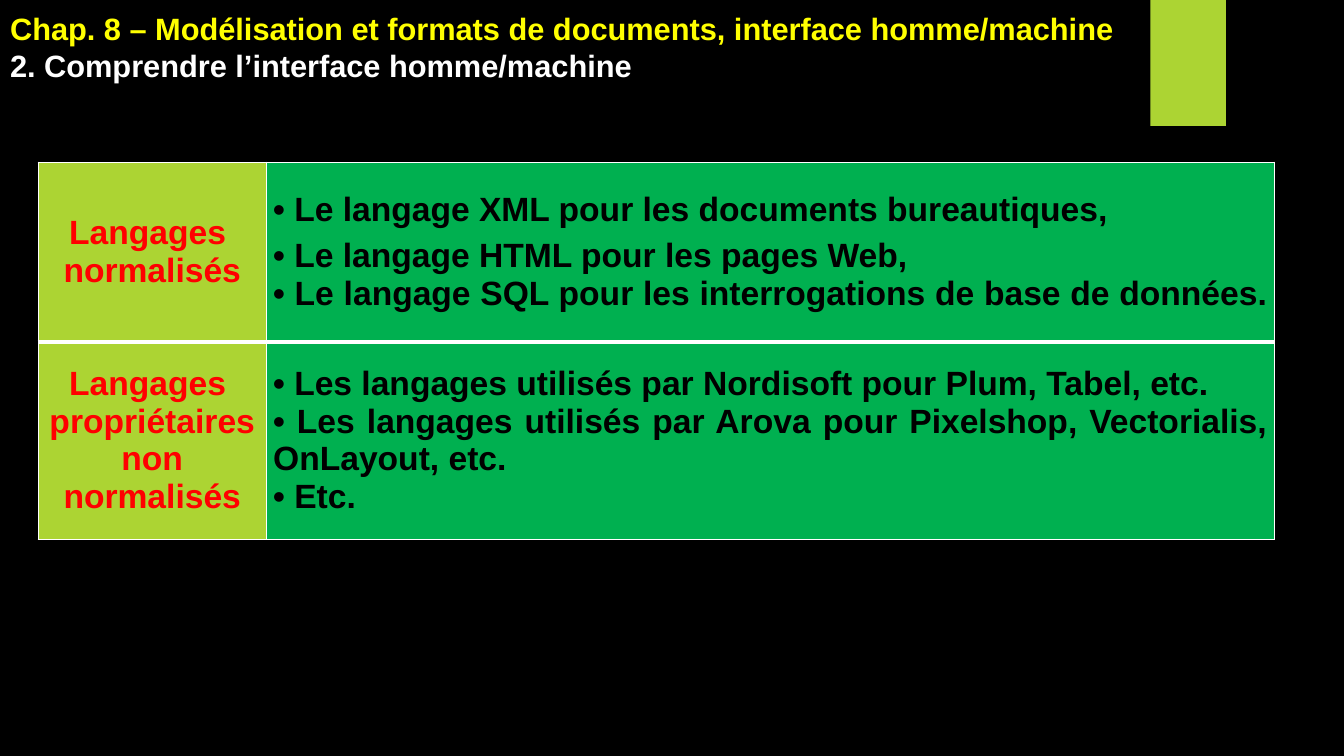
from dataclasses import dataclass

from lxml.etree import SubElement
from pptx import Presentation
from pptx.dml.color import RGBColor as Rgb
from pptx.enum.shapes import MSO_SHAPE as Shape
from pptx.enum.text import MSO_ANCHOR as Anchor, MSO_AUTO_SIZE as Auto, PP_ALIGN as Align
from pptx.oxml.ns import qn
from pptx.util import Inches, Pt


@dataclass(frozen=True)
class Theme:
    font: str = "Arial"
    back: str = "000000"
    lime: str = "ACD433"
    green: str = "00B050"
    red: str = "FF0000"
    yellow: str = "FFFF00"
    white: str = "FFFFFF"
    black: str = "000000"
    head: int = 22
    body: int = 24


@dataclass(frozen=True)
class Line:
    text: str
    color: str
    before: int = 0


@dataclass(frozen=True)
class Row:
    height: float
    label: list[Line]
    items: list[Line]


THEME = Theme()
TITLE = [
    Line("Chap. 8 – Modélisation et formats de documents, interface homme/machine", THEME.yellow),
    Line("2. Comprendre l’interface homme/machine", THEME.white),
]
COLS = (2.26, 10)
ROWS = [
    Row(
        1.78,
        [Line("Langages ", THEME.red), Line("normalisés", THEME.red)],
        [
            Line("• Le langage XML pour les documents bureautiques,", THEME.black),
            Line("• Le langage HTML pour les pages Web,", THEME.black, before=6),
            Line("• Le langage SQL pour les interrogations de base de données. ", THEME.black),
        ],
    ),
    Row(
        1.96,
        [Line(text, THEME.red) for text in ("Langages ", "propriétaires", "non", "normalisés")],
        [
            Line("• Les langages utilisés par Nordisoft pour Plum, Tabel, etc.", THEME.black),
            Line("• Les langages utilisés par Arova pour Pixelshop, Vectorialis, OnLayout, etc.",
                 THEME.black),
            Line("• Etc.", THEME.black),
        ],
    ),
]


def write(frame, lines: list[Line], *, size: int, align: Align) -> None:
    for i, line in enumerate(lines):
        para = frame.paragraphs[0] if i == 0 else frame.add_paragraph()
        para.alignment = align
        para.space_before = Pt(line.before)
        run = para.add_run()
        run.text = line.text
        font = run.font
        font.name, font.size, font.bold = THEME.font, Pt(size), True
        font.color.rgb = Rgb.from_string(line.color)


def paint(target, color: str) -> None:
    target.fill.solid()
    target.fill.fore_color.rgb = Rgb.from_string(color)


def edge(cell, side: str, width: float) -> None:
    props = cell._tc.get_or_add_tcPr()
    line = SubElement(props, qn(f"a:ln{side}"), w=str(Pt(width)))
    fill = SubElement(line, qn("a:solidFill"))
    SubElement(fill, qn("a:srgbClr"), val=THEME.white)


def add_title(slide) -> None:
    title = slide.shapes.title
    title.left, title.top = Inches(0), Inches(-0.05)
    title.width, title.height = Inches(11.26), Inches(0.93)
    frame = title.text_frame
    frame.word_wrap, frame.auto_size = True, Auto.NONE
    frame.vertical_anchor = Anchor.BOTTOM
    write(frame, TITLE, size=THEME.head, align=Align.LEFT)


def add_tab(slide) -> None:
    tab = slide.shapes.add_shape(
        Shape.RECTANGLE, Inches(11.41), Inches(0), Inches(0.75), Inches(1.25))
    tab.shadow.inherit = False
    paint(tab, THEME.lime)
    tab.line.fill.background()


def add_grid(slide) -> None:
    grid = slide.shapes.add_table(
        len(ROWS), len(COLS), Inches(0.38), Inches(1.61),
        Inches(sum(COLS)), Inches(sum(row.height for row in ROWS))).table
    grid.first_row = grid.horz_banding = False
    for col, width in zip(grid.columns, COLS):
        col.width = Inches(width)
    for r, row in enumerate(ROWS):
        grid.rows[r].height = Inches(row.height)
        parts = ((row.label, THEME.lime, Align.CENTER), (row.items, THEME.green, Align.JUSTIFY))
        for c, (lines, color, align) in enumerate(parts):
            cell = grid.cell(r, c)
            cell.vertical_anchor = Anchor.MIDDLE
            cell.margin_left = cell.margin_right = Inches(0.07)
            cell.margin_top = cell.margin_bottom = Inches(0)
            for side in "LRTB":
                inner = side == ("B" if r == 0 else "T")
                edge(cell, side, 3 if inner else 1)
            paint(cell, color)
            write(cell.text_frame, lines, size=THEME.body, align=align)


def main() -> None:
    deck = Presentation()
    deck.slide_width, deck.slide_height = Inches(13.33), Inches(7.5)
    slide = deck.slides.add_slide(deck.slide_layouts[5])
    paint(slide.background, THEME.back)
    add_tab(slide)
    add_grid(slide)
    add_title(slide)
    deck.save("out.pptx")


if __name__ == "__main__":
    main()
